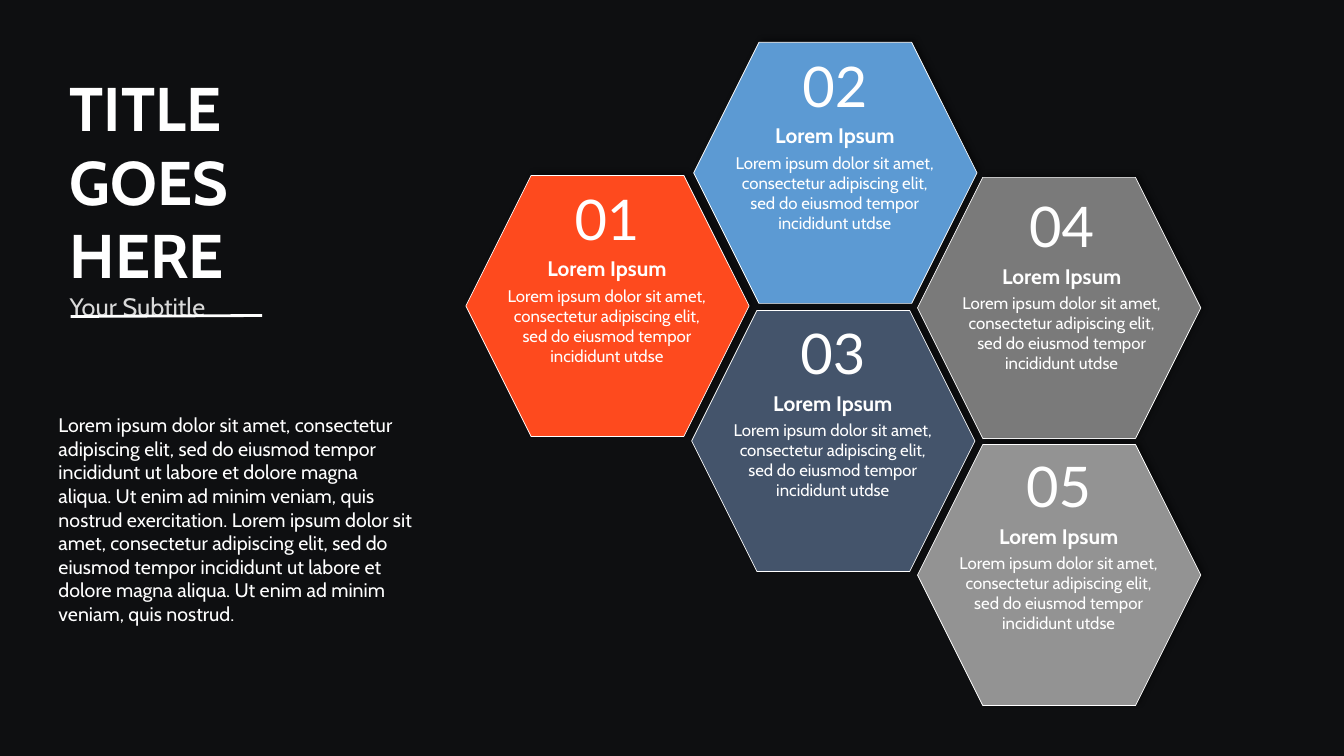
from lxml.etree import SubElement
from pptx import Presentation
from pptx.dml.color import RGBColor
from pptx.enum.shapes import MSO_CONNECTOR, MSO_SHAPE
from pptx.enum.text import MSO_ANCHOR, MSO_AUTO_SIZE, PP_ALIGN
from pptx.oxml.ns import qn
from pptx.util import Inches, Pt

DARK = RGBColor(0x0E, 0x0F, 0x11)
WHITE = RGBColor(0xFF, 0xFF, 0xFF)
PALE = RGBColor(0xD9, 0xD9, 0xD9)
BLUE = RGBColor(0x5C, 0x9A, 0xD3)
RED = RGBColor(0xFE, 0x4A, 0x1E)
NAVY = RGBColor(0x44, 0x54, 0x6B)
GREY = RGBColor(0x7A, 0x7A, 0x7A)
SILVER = RGBColor(0x93, 0x93, 0x93)

HEAD = "Lorem Ipsum"
BLURB = ("Lorem ipsum dolor sit amet, consectetur adipiscing elit, "
         "sed do eiusmod tempor incididunt utdse")
INTRO = ("Lorem ipsum dolor sit amet, consectetur adipiscing elit, sed do "
         "eiusmod tempor incididunt ut labore et dolore magna aliqua. Ut enim "
         "ad minim veniam, quis nostrud exercitation. Lorem ipsum dolor sit "
         "amet, consectetur adipiscing elit, sed do eiusmod tempor incididunt "
         "ut labore et dolore magna aliqua. Ut enim ad minim veniam, quis "
         "nostrud.")

# Fill, hexagon corner, number corner
CARDS = [
    (RED, (4.62, 1.74), (5.19, 1.78)),
    (BLUE, (6.88, 0.42), (7.45, 0.46)),
    (NAVY, (6.86, 3.08), (7.43, 3.11)),
    (GREY, (9.1, 1.76), (9.7, 1.85)),
    (SILVER, (9.1, 4.41), (9.67, 4.43)),
]


class Deck:
    font = "Cabin"

    def __init__(self, slide):
        self.slide = slide
        self.shapes = slide.shapes
        fill = slide.background.fill
        fill.solid()
        fill.fore_color.rgb = DARK

    def put(self, frame, lines, align=PP_ALIGN.LEFT, gap=0,
            anchor=MSO_ANCHOR.TOP):
        """Fill a frame; each line is text, size, colour, bold, font."""
        frame.word_wrap = True
        frame.auto_size = MSO_AUTO_SIZE.NONE
        frame.vertical_anchor = anchor
        frame.text = "\n".join(line[0] for line in lines)
        for i, (para, line) in enumerate(zip(frame.paragraphs, lines)):
            para.alignment = align
            para.line_spacing = 1.0
            para.space_before = Pt(gap if i else 0)
            for run in para.runs:
                font = run.font
                font.size = Pt(line[1])
                font.color.rgb, font.bold, font.name = line[2:]

    def holder(self, shape, box, lines):
        shape.left, shape.top, shape.width, shape.height = map(Inches, box)
        self.put(shape.text_frame, lines)

    def body(self, box, lines):
        shape = self.slide.placeholders[1]
        self.holder(shape, box, lines)
        for para in shape.text_frame.paragraphs:
            props = para._p.get_or_add_pPr()
            props.set("marL", "0")
            props.set("indent", "0")
            SubElement(props, qn("a:buNone"))

    def hexagon(self, left, top, color):
        shape = self.shapes.add_shape(
            MSO_SHAPE.HEXAGON, Inches(left), Inches(top),
            Inches(2.81), Inches(2.59))
        shape.fill.solid()
        shape.fill.fore_color.rgb = color
        shape.line.color.rgb = WHITE
        shape.line.width = Pt(0.5)
        # Soft shadow towards the upper right
        shape.shadow.inherit = False
        effects = shape._element.spPr.find(qn("a:effectLst"))
        shade = SubElement(effects, qn("a:outerShdw"), blurRad=str(Pt(4)),
                           dist=str(Pt(3)), dir=str(315 * 60000),
                           algn="bl", rotWithShape="0")
        tint = SubElement(shade, qn("a:srgbClr"), val="000000")
        SubElement(tint, qn("a:alpha"), val="40000")

    def label(self, left, top, number):
        group = self.shapes.add_group_shape()
        box = group.shapes.add_textbox(
            Inches(left), Inches(top), Inches(1.66), Inches(0.77))
        self.put(box.text_frame, [(number, 40, WHITE, False, "Lato")],
                 PP_ALIGN.CENTER, anchor=MSO_ANCHOR.MIDDLE)
        box = group.shapes.add_textbox(
            Inches(left - 0.23), Inches(top + 0.73), Inches(2.12), Inches(1.17))
        frame = box.text_frame
        frame.margin_left = frame.margin_right = Inches(0.07)
        frame.margin_top = frame.margin_bottom = Inches(0.03)
        self.put(frame, [(HEAD, 15, WHITE, True, self.font),
                         (BLURB, 12, WHITE, False, self.font)],
                 PP_ALIGN.CENTER, gap=3)

    def rule(self, start, end):
        line = self.shapes.add_connector(
            MSO_CONNECTOR.STRAIGHT, *map(Inches, start + end))
        line.line.color.rgb = WHITE
        line.line.width = Pt(2)
        SubElement(line._element.spPr, qn("a:effectLst"))


def main():
    show = Presentation()
    show.slide_width, show.slide_height = Inches(13.33), Inches(7.5)
    deck = Deck(show.slides.add_slide(show.slide_layouts[1]))

    # Title, subtitle and intro
    deck.holder(deck.shapes.title, (0.59, 0.64, 3.23, 2.63),
                [("TITLE GOES HERE", 44, WHITE, True, deck.font),
                 ("Your Subtitle", 18, PALE, False, deck.font)])
    deck.body((0.48, 4.05, 3.72, 2.22),
              [(INTRO, 14, WHITE, False, deck.font)])
    deck.rule((0.7, 3.14), (2.6, 3.13))

    # Honeycomb of numbered cards
    for i, (color, corner, spot) in enumerate(CARDS, 1):
        deck.hexagon(*corner, color)
        deck.label(*spot, f"{i:02}")

    show.save("out.pptx")


if __name__ == "__main__":
    main()
